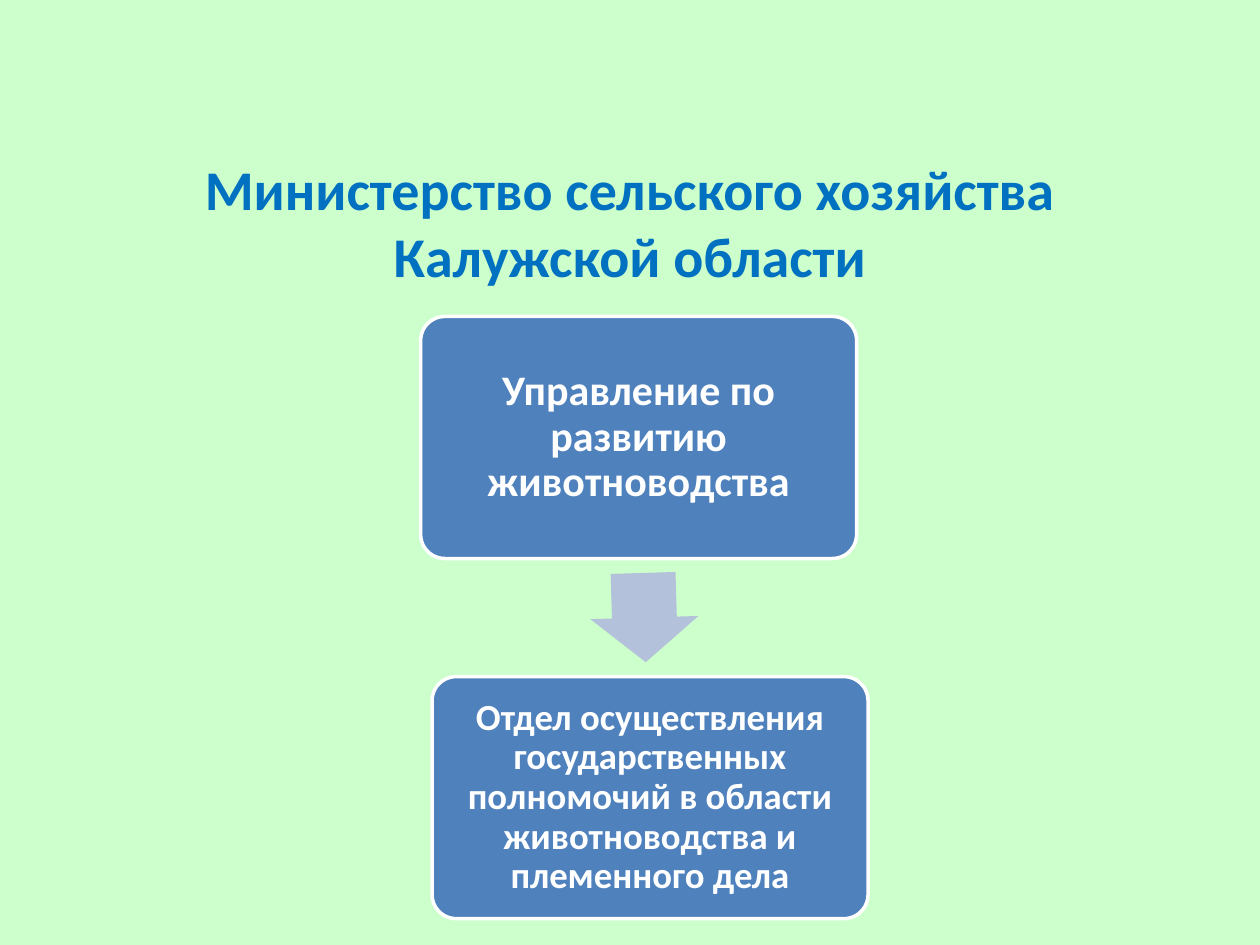
from pptx import Presentation
from pptx.dml.color import RGBColor
from pptx.enum.shapes import MSO_SHAPE
from pptx.enum.text import MSO_ANCHOR, MSO_AUTO_SIZE, PP_ALIGN
from pptx.util import Cm, Pt

ROUNDED, ARROW = MSO_SHAPE.ROUNDED_RECTANGLE, MSO_SHAPE.RIGHT_ARROW
MIDDLE, CENTER, NO_FIT = MSO_ANCHOR.MIDDLE, PP_ALIGN.CENTER, MSO_AUTO_SIZE.NONE

TITLE = "Министерство сельского хозяйства Калужской области"
# text, left and top in cm, type size, inset in cm
BOXES = [
    ("Управление по развитию животноводства", 8.48, 6.38, 24, 0.25),
    ("Отдел осуществления государственных полномочий в области "
     "животноводства и племенного дела", 8.71, 13.64, 21, 0.23),
]
BOX_W, BOX_H = 8.79, 4.88
ARROW_W, ARROW_H, ARROW_TURN = 1.8, 2.18, 88.3

THEME = {
    "font": "Calibri", "title_size": 32,
    "background": "CCFFCC", "title": "0070C0", "box": "4F81BD",
    "arrow": "B3C1DB", "light": "FFFFFF",
}


def color(name):
    return RGBColor.from_string(THEME[name])


def write(shape, text, size, color_name, inset):
    tf = shape.text_frame
    tf.word_wrap = True
    tf.auto_size = NO_FIT
    tf.vertical_anchor = MIDDLE
    tf.margin_left = tf.margin_right = Cm(inset)
    tf.margin_top = tf.margin_bottom = Cm(inset)
    p = tf.paragraphs[0]
    p.alignment = CENTER
    r = p.add_run()
    r.text = text
    r.font.name = THEME["font"]
    r.font.size = Pt(size)
    r.font.bold = True
    r.font.color.rgb = color(color_name)
    return p


def add_filled(s, kind, left, top, width, height, fill):
    sp = s.shapes.add_shape(kind, Cm(left), Cm(top), Cm(width), Cm(height))
    sp.shadow.inherit = False
    sp.fill.solid()
    sp.fill.fore_color.rgb = color(fill)
    return sp


def add_box(s, text, left, top, size, inset):
    sp = add_filled(s, ROUNDED, left, top, BOX_W, BOX_H, "box")
    sp.adjustments[0] = 0.1
    sp.line.color.rgb = color("light")
    sp.line.width = Pt(2)
    p = write(sp, text, size, "light", inset)
    p.line_spacing = 0.9


def add_arrow_between(s, upper, lower):
    """Centre the turned arrow in the gap between two boxes."""
    center_x = (upper[1] + lower[1] + BOX_W) / 2
    center_y = (upper[2] + BOX_H + lower[2]) / 2
    sp = add_filled(s, ARROW, center_x - ARROW_W / 2, center_y - ARROW_H / 2,
                    ARROW_W, ARROW_H, "arrow")
    sp.adjustments[0] = 0.6
    sp.adjustments[1] = 0.5
    sp.rotation = ARROW_TURN
    sp.line.fill.background()


def main():
    prs = Presentation()
    prs.slide_width, prs.slide_height = Cm(25.4), Cm(19.05)
    s = prs.slides.add_slide(prs.slide_layouts[5])
    s.background.fill.solid()
    s.background.fill.fore_color.rgb = color("background")

    title = s.shapes.title
    title.left, title.top = Cm(1.27), Cm(2.87)
    title.width, title.height = Cm(22.86), Cm(3.18)
    write(title, TITLE, THEME["title_size"], "title", 0.25)

    for box in BOXES:
        add_box(s, *box)
    for upper, lower in zip(BOXES, BOXES[1:]):
        add_arrow_between(s, upper, lower)

    prs.save("out.pptx")


if __name__ == "__main__":
    main()
